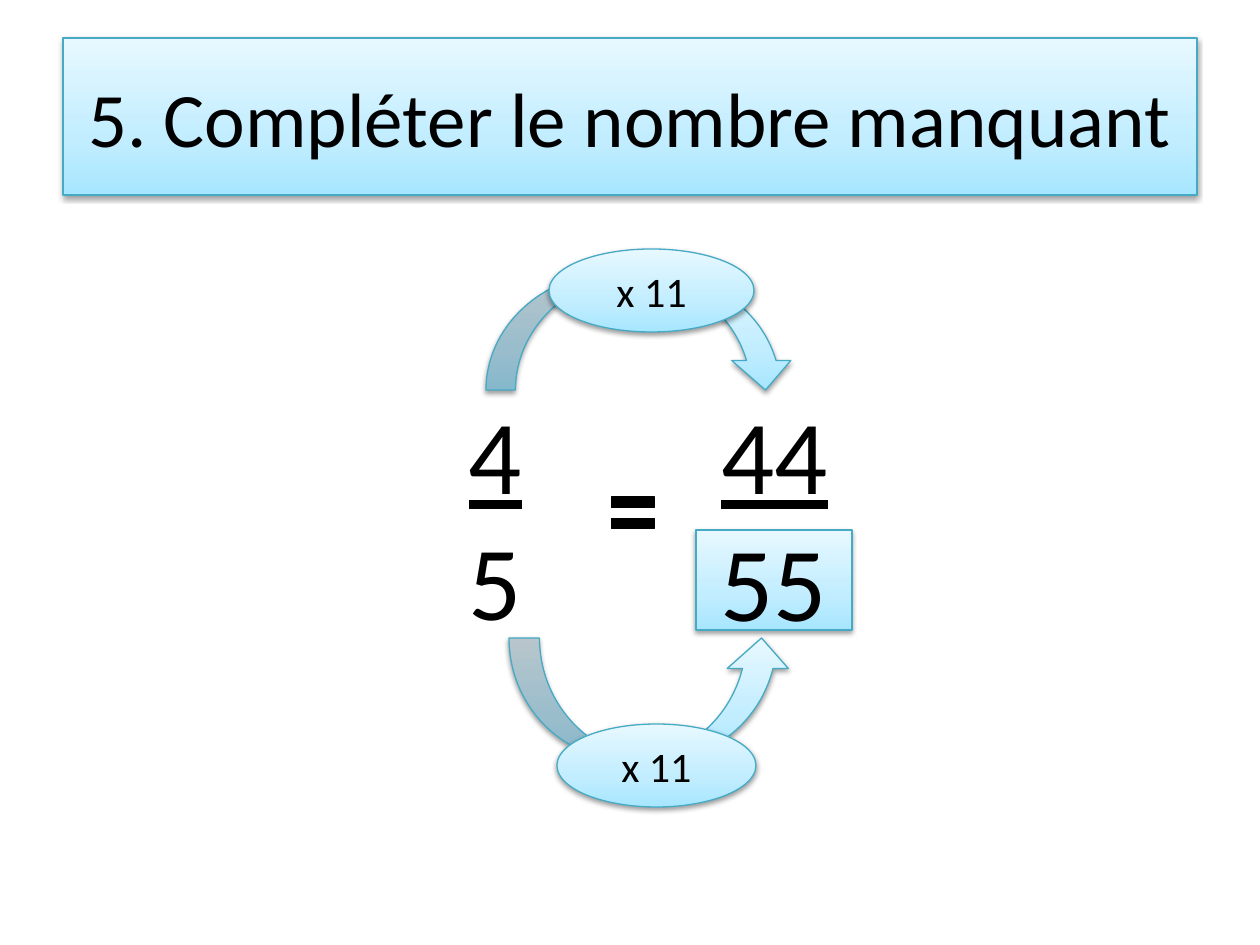
from copy import deepcopy
from dataclasses import dataclass

from lxml.etree import SubElement
from pptx import Presentation
from pptx.dml.color import RGBColor
from pptx.enum.shapes import MSO_SHAPE
from pptx.enum.text import MSO_ANCHOR, MSO_AUTO_SIZE, PP_ALIGN
from pptx.oxml.ns import qn
from pptx.util import Pt

EMU_PER_PX = 914400 / 126


@dataclass(frozen=True)
class Theme:
    font: str = "Calibri"
    ink: str = "000000"
    border: str = "46AAC5"
    gradient: tuple = ((0, "A7E6FF"), (0.35, "C1EDFF"), (1, "E7F8FF"))
    border_width: float = 0.75
    shadow_blur: float = 3.1
    shadow_distance: float = 1.6
    shadow_opacity: int = 38
    title_size: int = 44
    factor_size: int = 24
    number_size: int = 60


THEME = Theme()


def px(*lengths):
    return [round(length * EMU_PER_PX) for length in lengths]


def outline(shape, color):
    shape.line.color.rgb = RGBColor.from_string(color)
    shape.line.width = Pt(THEME.border_width)


def fill_gradient(shape):
    shape.fill.gradient()
    shape.fill.gradient_angle = 90
    stop_list = shape.fill.gradient_stops
    first = shape._element.spPr.find(qn("a:gradFill")).find(qn("a:gsLst"))[0]
    first.addnext(deepcopy(first))
    stop_list = shape.fill.gradient_stops
    for stop, (position, color) in zip(stop_list, THEME.gradient):
        stop.position = position
        stop.color.rgb = RGBColor.from_string(color)


def cast_shadow(shape):
    shape.shadow.inherit = False
    effects = shape._element.spPr.find(qn("a:effectLst"))
    shadow = SubElement(
        effects, qn("a:outerShdw"),
        blurRad=str(Pt(THEME.shadow_blur)), dist=str(Pt(THEME.shadow_distance)),
        dir="5400000", rotWithShape="0")
    color = SubElement(shadow, qn("a:srgbClr"), val=THEME.ink)
    SubElement(color, qn("a:alpha"), val=str(THEME.shadow_opacity * 1000))


def write_line(paragraph, text, size, underline=False):
    paragraph.text = text
    paragraph.alignment = PP_ALIGN.CENTER
    paragraph.font.name = THEME.font
    paragraph.font.size = Pt(size)
    paragraph.font.color.rgb = RGBColor.from_string(THEME.ink)
    for run in paragraph.runs:
        run.font.underline = underline


def add_panel(shapes, kind, box, text=None, size=None):
    panel = shapes.add_shape(kind, *px(*box))
    fill_gradient(panel)
    outline(panel, THEME.border)
    cast_shadow(panel)
    if text:
        frame = panel.text_frame
        frame.word_wrap = True
        frame.vertical_anchor = MSO_ANCHOR.MIDDLE
        write_line(frame.paragraphs[0], text, size)


def add_multiplier(shapes, arrow, arrow_box, factor, factor_box):
    group = shapes.add_group_shape()
    add_panel(group.shapes, arrow, arrow_box)
    add_panel(group.shapes, MSO_SHAPE.OVAL, factor_box, factor, THEME.factor_size)


def add_fraction(shapes, box, numerator, denominator=None):
    frame = shapes.add_textbox(*px(*box)).text_frame
    frame.word_wrap = True
    frame.auto_size = MSO_AUTO_SIZE.SHAPE_TO_FIT_TEXT
    write_line(frame.paragraphs[0], numerator, THEME.number_size, underline=True)
    if denominator:
        write_line(frame.add_paragraph(), denominator, THEME.number_size)


def add_equals(shapes, box):
    equals = shapes.add_shape(MSO_SHAPE.MATH_EQUAL, *px(*box))
    equals.adjustments[0] = 0.12
    equals.adjustments[1] = 0.12
    equals.fill.solid()
    equals.fill.fore_color.rgb = RGBColor.from_string(THEME.ink)
    outline(equals, THEME.ink)
    equals.shadow.inherit = False


def add_equation(shapes):
    group = shapes.add_group_shape()
    add_fraction(group.shapes, (384, 383, 223, 267), "4", "5")
    add_fraction(group.shapes, (663, 383, 223, 267), "44")
    add_equals(group.shapes, (604, 469, 58, 88))


def main():
    presentation = Presentation()
    presentation.slide_width, presentation.slide_height = px(1260, 945)
    shapes = presentation.slides.add_slide(presentation.slide_layouts[6]).shapes

    add_panel(shapes, MSO_SHAPE.RECTANGLE, (63, 38, 1134, 157),
              "5. Compléter le nombre manquant", THEME.title_size)
    add_multiplier(shapes, MSO_SHAPE.CURVED_UP_ARROW, (509, 638, 283, 122),
                   "x 11", (557, 724, 199, 83))
    add_multiplier(shapes, MSO_SHAPE.CURVED_DOWN_ARROW, (486, 272, 309, 118),
                   "x 11", (549, 249, 205, 83))
    add_panel(shapes, MSO_SHAPE.RECTANGLE, (696, 530, 156, 100),
              "55", THEME.number_size)
    add_equation(shapes)

    presentation.save("out.pptx")


if __name__ == "__main__":
    main()
